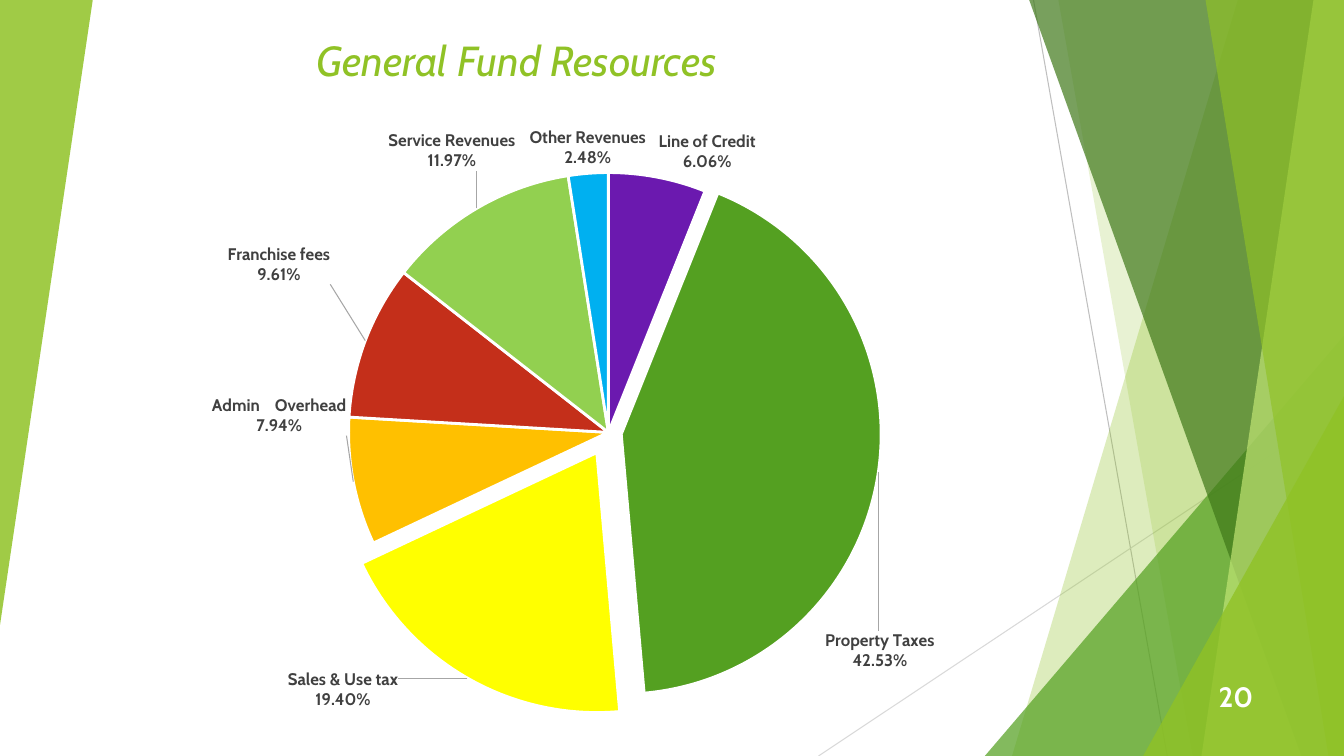
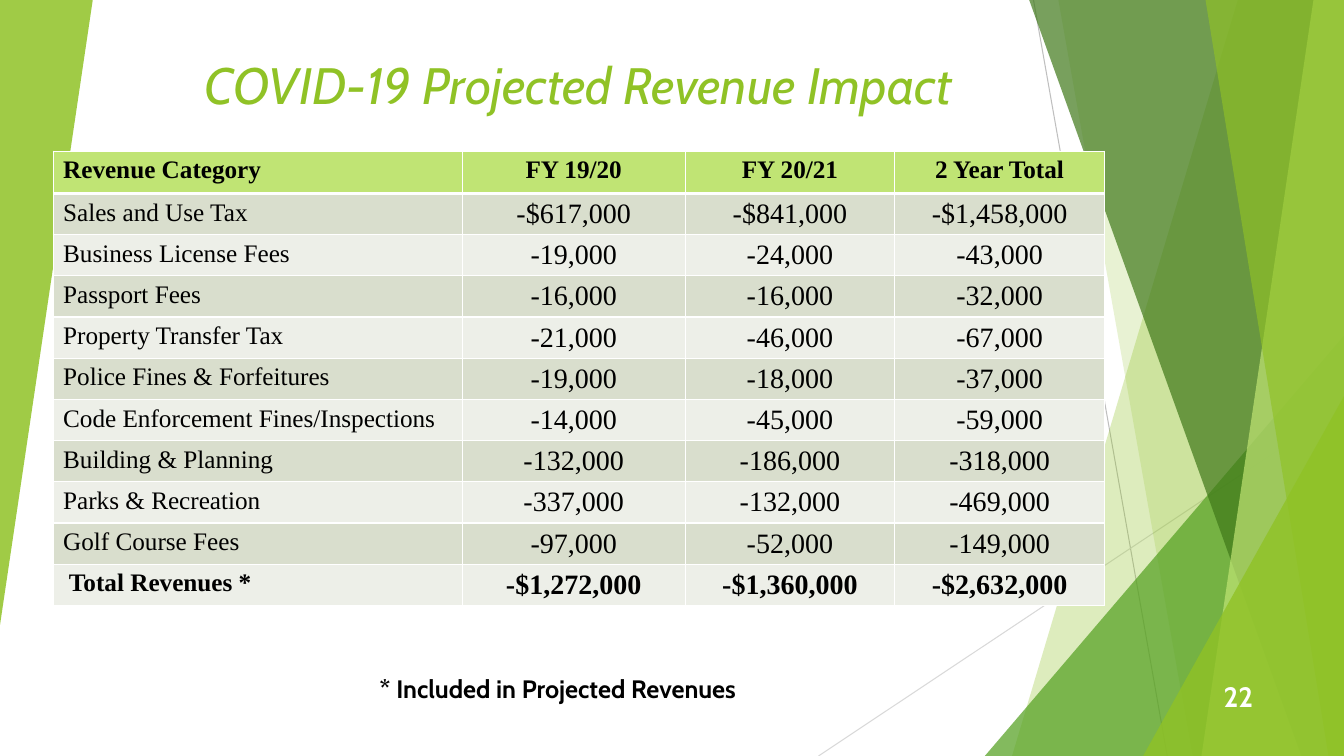
import dataclasses

import lxml.etree
import pptx
import pptx.chart.data
import pptx.dml.color
import pptx.enum.chart
import pptx.enum.shapes
import pptx.enum.text
import pptx.oxml
import pptx.oxml.ns
import pptx.presentation
import pptx.slide
import pptx.util

ALIGN = pptx.enum.text.PP_ALIGN
ANCHOR = pptx.enum.text.MSO_ANCHOR
HEIGHT = pptx.util.Inches(7.5)
WIDTH = HEIGHT * 16 // 9


@dataclasses.dataclass(frozen=True)
class Theme:
    font: str = "Cabin"
    table_font: str = "Times New Roman"
    green: str = "90C226"
    mid_green: str = "54A021"
    dark_green: str = "3F7819"
    light_green: str = "C0E474"
    bands: tuple[str, str] = ("D9DECD", "EDEFE8")
    hairlines: tuple[str, str] = ("BFBFBF", "D9D9D9")
    white: str = "FFFFFF"
    black: str = "000000"
    label: str = "404040"
    leader: str = "A6A6A6"
    chart_title_size: float = 30
    table_title_size: float = 36.5
    number_size: float = 20
    text_size: float = 18
    label_size: float = 12
    chart_size: float = 10


@dataclasses.dataclass(frozen=True)
class Box:
    left: float
    top: float
    width: float
    height: float

    def emu(self) -> tuple[int, int, int, int]:
        return x(self.left), y(self.top), x(self.width), y(self.height)


@dataclasses.dataclass(frozen=True)
class Hairline:
    start: tuple[float, float]
    end: tuple[float, float]
    color: str


@dataclasses.dataclass(frozen=True)
class Facet:
    top_x: float
    bottom_x: float
    color: str
    opacity: int


@dataclasses.dataclass(frozen=True)
class Triangle:
    box: Box
    color: str
    opacity: int
    rotation: int = 0


@dataclasses.dataclass(frozen=True)
class TextStyle:
    size: float
    color: str
    font: str
    bold: bool = False
    italic: bool = False
    align: ALIGN = ALIGN.LEFT


@dataclasses.dataclass(frozen=True)
class Slice:
    name: str
    value: float
    color: str
    explosion: int = 0
    label_shift: tuple[float, float] | None = None


THEME = Theme()

HAIRLINES = (
    Hairline((76.9, 0), (86.85, 100), THEME.hairlines[0]),
    Hairline((100, 53.73), (60.9, 100), THEME.hairlines[1]),
)
PANELS = (
    Facet(92.1, 75.3, THEME.green, 30),
    Facet(78.75, 88.73, THEME.green, 20),
    Triangle(Box(73.28, 44.4, 26.72, 55.6), THEME.mid_green, 72),
    Facet(76.58, 96.83, THEME.dark_green, 70),
    Facet(97.73, 89.4, THEME.light_green, 70),
    Facet(89.7, 98.85, THEME.green, 65),
    Triangle(Box(85.05, 52.4, 14.95, 47.6), THEME.green, 80),
    Triangle(Box(0, 0, 6.9, 82.67), THEME.green, 85, 180),
)
PAGE_NUMBER = Box(88.35, 89.47, 5.63, 5.33)
SLICES = (
    Slice("Line of Credit", 6.06, "6B19AF"),
    Slice("Property Taxes", 42.53, THEME.mid_green, 5, (-5.8, 24.1)),
    Slice("Sales & Use tax", 19.4, "FFFF00", 9, (-6.5, -2)),
    Slice("Admin    Overhead", 7.94, "FFC000", 0, (-0.1, -13.3)),
    Slice("Franchise fees", 9.61, "C42F1A", 0, (-2.9, -8.3)),
    Slice("Service Revenues", 11.97, "92D050", 0, (4.1, -5)),
    Slice("Other Revenues", 2.48, "00B0F0"),
)
PIE_AREA = Box(25.2, 10.8, 51, 79.5)
COLUMNS = (30.45, 16.58, 15.6, 15.6)
HEADER_HEIGHT = 5.6
ROW_HEIGHT = 5.45
REVENUES = (
    ("Revenue Category", "FY 19/20", "FY 20/21", "2 Year Total"),
    ("Sales and Use Tax", "-$617,000", "-$841,000", "-$1,458,000"),
    ("Business License Fees", "-19,000", "-24,000", "-43,000"),
    ("Passport Fees", "-16,000", "-16,000", "-32,000"),
    ("Property Transfer Tax", "-21,000", "-46,000", "-67,000"),
    ("Police Fines & Forfeitures", "-19,000", "-18,000", "-37,000"),
    ("Code Enforcement Fines/Inspections", "-14,000", "-45,000", "-59,000"),
    ("Building & Planning", "-132,000", "-186,000", "-318,000"),
    ("Parks & Recreation", "-337,000", "-132,000", "-469,000"),
    ("Golf Course Fees", "-97,000", "-52,000", "-149,000"),
    (" Total Revenues *", "-$1,272,000", "-$1,360,000", "-$2,632,000"),
)


def x(percent: float) -> int:
    return round(WIDTH * percent / 100)


def y(percent: float) -> int:
    return round(HEIGHT * percent / 100)


def rgb(color: str) -> pptx.dml.color.RGBColor:
    return pptx.dml.color.RGBColor.from_string(color)


def xml(text: str) -> lxml.etree.ElementBase:
    head, tail = text.split(">", 1)
    closed = head.endswith("/")
    head = head.rstrip("/") + " " + pptx.oxml.ns.nsdecls("a", "c")
    return pptx.oxml.parse_xml(head + ("/>" if closed else ">") + tail)


def add_hairline(slide: pptx.slide.Slide, line: Hairline) -> None:
    (x1, y1), (x2, y2) = line.start, line.end
    cxn = slide.shapes.add_connector(
        pptx.enum.shapes.MSO_CONNECTOR.STRAIGHT, x(x1), y(y1), x(x2), y(y2))
    cxn.line.color.rgb = rgb(line.color)
    cxn.line.width = pptx.util.Pt(0.75)
    cxn.element.spPr.append(xml("<a:effectLst/>"))


def add_panel(slide: pptx.slide.Slide, panel: Facet | Triangle) -> None:
    if isinstance(panel, Facet):
        builder = slide.shapes.build_freeform(x(panel.top_x), 0)
        builder.add_line_segments(
            [(x(100), 0), (x(100), y(100)), (x(panel.bottom_x), y(100))])
        sp = builder.convert_to_shape()
    else:
        sp = slide.shapes.add_shape(
            pptx.enum.shapes.MSO_SHAPE.ISOSCELES_TRIANGLE, *panel.box.emu())
        sp.adjustments[0] = 1
        sp.rotation = panel.rotation
    sp.shadow.inherit = False
    sp.line.fill.background()
    sp.fill.solid()
    sp.fill.fore_color.rgb = rgb(panel.color)
    color = sp.element.spPr.find(".//" + pptx.oxml.ns.qn("a:srgbClr"))
    color.append(xml(f'<a:alpha val="{panel.opacity * 1000}"/>'))


def decorate(layout: pptx.slide.SlideLayout, slide: pptx.slide.Slide) -> None:
    for placeholder in list(layout.placeholders):
        layout.shapes.element.remove(placeholder.element)
    for line in HAIRLINES:
        add_hairline(slide, line)
    for panel in PANELS:
        add_panel(slide, panel)
    for sp in list(slide.shapes):
        layout.shapes.element.append(sp.element)


def write(tf: pptx.text.text.TextFrame, text: str, style: TextStyle) -> None:
    p = tf.paragraphs[0]
    p.alignment = style.align
    r = p.add_run()
    r.text = text
    r.font.name = style.font
    r.font.size = pptx.util.Pt(style.size)
    r.font.bold = style.bold
    r.font.italic = style.italic
    r.font.color.rgb = rgb(style.color)


def add_text(slide: pptx.slide.Slide, box: Box, text: str, style: TextStyle,
             anchor: ANCHOR = ANCHOR.TOP, wrap: bool = True) -> None:
    tf = slide.shapes.add_textbox(*box.emu()).text_frame
    tf.word_wrap = wrap
    tf.vertical_anchor = anchor
    if not wrap:
        tf.auto_size = pptx.enum.text.MSO_AUTO_SIZE.SHAPE_TO_FIT_TEXT
    write(tf, text, style)


def add_title(slide: pptx.slide.Slide, box: Box, text: str, size: float) -> None:
    style = TextStyle(size, THEME.green, THEME.font, italic=True, align=ALIGN.CENTER)
    add_text(slide, box, text, style, ANCHOR.BOTTOM)


def add_page_number(slide: pptx.slide.Slide, number: int) -> None:
    style = TextStyle(THEME.number_size, THEME.white, THEME.font, bold=True, align=ALIGN.RIGHT)
    add_text(slide, PAGE_NUMBER, str(number), style, ANCHOR.MIDDLE)


def pie_labels() -> lxml.etree.ElementBase:
    look = (
        '<c:numFmt formatCode="0.00%" sourceLinked="0"/>'
        '<c:spPr><a:noFill/><a:ln><a:noFill/></a:ln></c:spPr>'
        f'<c:txPr><a:bodyPr/><a:p><a:pPr><a:defRPr sz="{THEME.label_size * 100}" b="1">'
        f'<a:solidFill><a:srgbClr val="{THEME.label}"/></a:solidFill>'
        f'<a:latin typeface="{THEME.font}"/></a:defRPr></a:pPr>'
        '<a:endParaRPr lang="en-US"/></a:p></c:txPr><c:dLblPos val="outEnd"/>'
        '<c:showLegendKey val="0"/><c:showVal val="0"/><c:showCatName val="1"/>'
        '<c:showSerName val="0"/><c:showPercent val="1"/><c:showBubbleSize val="0"/>'
        '<c:separator>\n</c:separator>')
    moved = "".join(
        f'<c:dLbl><c:idx val="{i}"/><c:layout><c:manualLayout>'
        f'<c:x val="{s.label_shift[0] / 100:.3f}"/><c:y val="{s.label_shift[1] / 100:.3f}"/>'
        f'</c:manualLayout></c:layout>{look}</c:dLbl>'
        for i, s in enumerate(SLICES) if s.label_shift)
    return xml(
        f'<c:dLbls>{moved}{look}<c:showLeaderLines val="1"/><c:leaderLines><c:spPr>'
        f'<a:ln w="9525"><a:solidFill><a:srgbClr val="{THEME.leader}"/></a:solidFill></a:ln>'
        '</c:spPr></c:leaderLines></c:dLbls>')


def add_pie(slide: pptx.slide.Slide, box: Box) -> None:
    data = pptx.chart.data.CategoryChartData()
    data.categories = [s.name for s in SLICES]
    data.add_series("Series 1", [s.value for s in SLICES])
    chart = slide.shapes.add_chart(
        pptx.enum.chart.XL_CHART_TYPE.PIE, *box.emu(), data).chart
    chart.has_title = False
    chart.has_legend = False
    chart.font.name = THEME.font
    chart.font.size = pptx.util.Pt(THEME.chart_size)
    chart.font.color.rgb = rgb(THEME.black)
    plot = chart.plots[0]
    plot.vary_by_categories = True
    for i, s in enumerate(SLICES):
        fmt = plot.series[0].points[i].format
        fmt.fill.solid()
        fmt.fill.fore_color.rgb = rgb(s.color)
        fmt.line.color.rgb = rgb(THEME.white)
        fmt.line.width = pptx.util.Pt(2)
        if s.explosion:
            sp_pr = chart.element.xpath(f".//c:dPt[c:idx/@val='{i}']/c:spPr")[0]
            sp_pr.addprevious(xml(f'<c:explosion val="{s.explosion}"/>'))
    chart.element.xpath(".//c:ser/c:cat")[0].addprevious(pie_labels())
    area = chart.element.xpath(".//c:plotArea")[0]
    for old in area.xpath("./c:layout"):
        area.remove(old)
    sides = zip("xywh", dataclasses.astuple(PIE_AREA))
    area.insert(0, xml(
        '<c:layout><c:manualLayout><c:layoutTarget val="inner"/>'
        '<c:xMode val="edge"/><c:yMode val="edge"/>'
        + "".join(f'<c:{side} val="{share / 100:.3f}"/>' for side, share in sides)
        + '</c:manualLayout></c:layout>'))


def set_borders(cell: pptx.table._Cell, top: int, bottom: int) -> None:
    tc_pr = cell._tc.get_or_add_tcPr()
    for i, (side, width) in enumerate(zip("LRTB", (1, 1, top, bottom))):
        tc_pr.insert(i, xml(
            f'<a:ln{side} w="{pptx.util.Pt(width)}"><a:solidFill>'
            f'<a:srgbClr val="{THEME.white}"/></a:solidFill></a:ln{side}>'))


def add_revenue_table(slide: pptx.slide.Slide, left: float, top: float) -> None:
    last = len(REVENUES) - 1
    box = Box(left, top, sum(COLUMNS), HEADER_HEIGHT + ROW_HEIGHT * last)
    table = slide.shapes.add_table(len(REVENUES), len(COLUMNS), *box.emu()).table
    table.first_row = table.horz_banding = False
    for column, width in zip(table.columns, COLUMNS):
        column.width = x(width)
    for i, row in enumerate(REVENUES):
        table.rows[i].height = y(ROW_HEIGHT if i else HEADER_HEIGHT)
        for j, text in enumerate(row):
            cell = table.cell(i, j)
            cell.margin_bottom = pptx.util.Pt(1.8)
            cell.fill.solid()
            cell.fill.fore_color.rgb = rgb(THEME.bands[(i - 1) % 2] if i else THEME.light_green)
            set_borders(cell, 3 if i == 1 else 1, 3 if i == 0 else 1)
            write(cell.text_frame, text, TextStyle(
                THEME.number_size if i and j else THEME.text_size,
                THEME.black, THEME.table_font, bold=i in (0, last),
                align=ALIGN.CENTER if j else ALIGN.LEFT))


def main() -> None:
    prs = pptx.Presentation()
    prs.slide_width, prs.slide_height = WIDTH, HEIGHT
    layout = prs.slide_layouts[6]

    resources = prs.slides.add_slide(layout)
    decorate(layout, resources)
    add_title(resources, Box(1.88, 2.8, 73.13, 9.07),
              "General Fund Resources", THEME.chart_title_size)
    add_pie(resources, Box(6.83, 13.47, 75.83, 86.53))
    add_page_number(resources, 20)

    impact = prs.slides.add_slide(layout)
    add_title(impact, Box(8, 1.33, 70.05, 14.53),
              "COVID-19 Projected Revenue Impact", THEME.table_title_size)
    add_revenue_table(impact, 3.95, 20)
    add_text(impact, Box(27.5, 88.4, 31.05, 5.33), "* Included in Projected Revenues",
             TextStyle(THEME.text_size, THEME.black, THEME.font, bold=True), wrap=False)
    add_page_number(impact, 22)

    prs.save("out.pptx")


if __name__ == "__main__":
    main()
